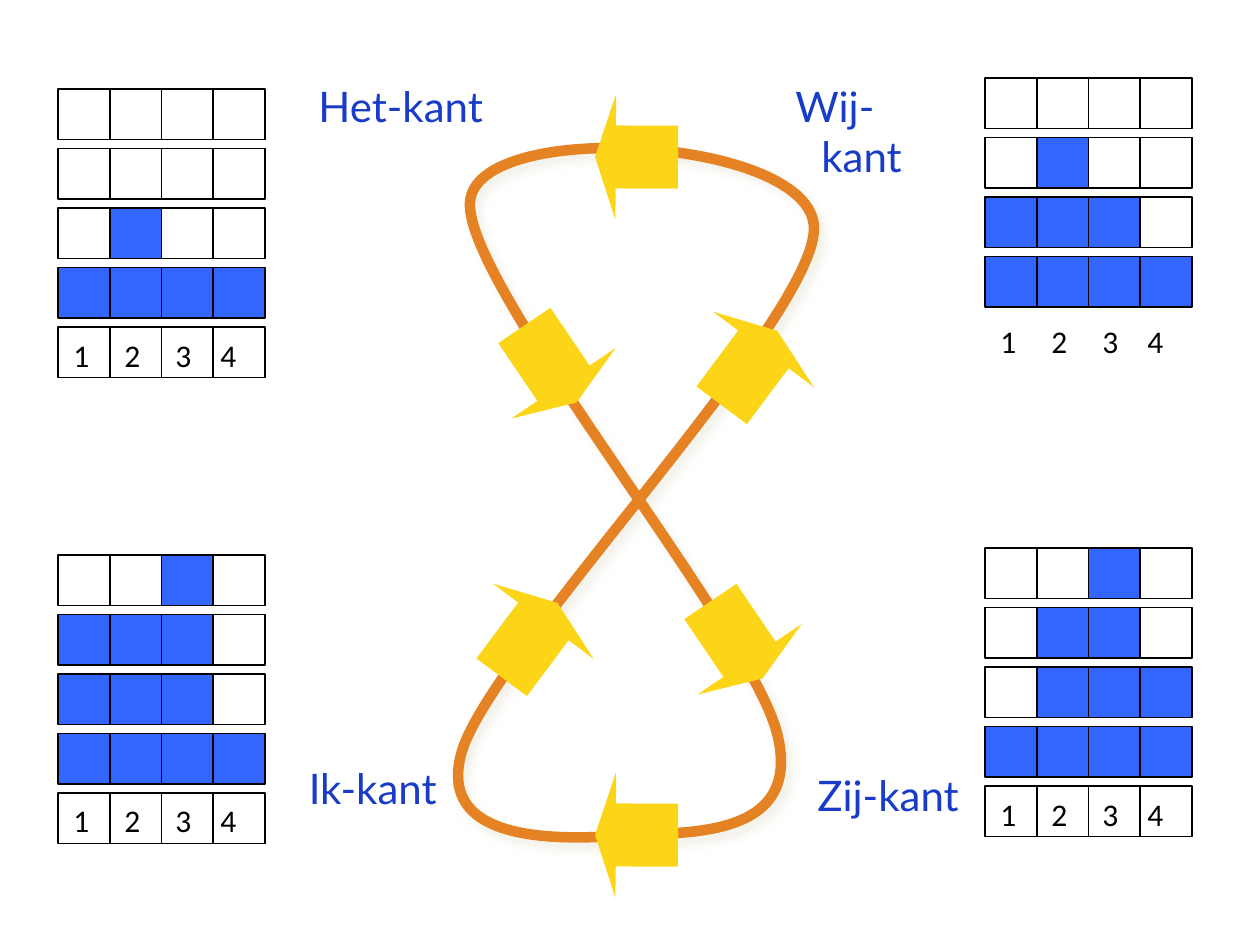
"""Build a slide with a figure-eight loop, direction arrows and four score grids."""
from lxml import etree
from pptx import Presentation, util as u
from pptx.dml.color import RGBColor
from pptx.enum import shapes, text
from pptx.oxml import ns

LABELS = [
    ("Het-kant", (306, 74, 261, 63), "LEFT"),
    ("Wij-kant", (783, 74, 174, 115), "LEFT"),
    ("Zij-kant", (805, 763, 174, 63), "LEFT"),
    ("Ik-kant", (238, 756, 211, 63), "RIGHT"),
]
GRIDS = [
    {"at": (58, 89), "rows": ["oo-o", "---o", "-#-o", "####", "oooo"], "digits": 330},
    {"at": (58, 555), "rows": ["oo#o", "###o", "###o", "####", "oooo"], "digits": 795},
    {"at": (985, 548), "rows": ["oo#o", "o##o", "o###", "####", "oooo"], "digits": 789},
    {"at": (985, 78), "rows": ["oooo", "o#oo", "###o", "####"], "digits": 316},
]
FILLS = {"#": "on", "o": "off", "-": None}
DIGITS = "1\t2\t3\t4"
DIGIT_TABS = (51, 102, 147)
ARROWS = [
    ((504, 301, 93, 126), 235.9, False),
    ((595, 94, 83, 126), 180.3, True),
    ((703, 305, 93, 126), 126.8, False),
    ((595, 772, 83, 126), 180.3, True),
    ((690, 577, 93, 126), 235.9, False),
    ((483, 577, 93, 126), 126.8, False),
]
LOOP_START = (777, 733)
LOOP_CURVES = [
    ((804, 838), (687, 832), (635, 835)),
    ((582, 838), (432, 852), (462, 751)),
    ((493, 650), (813, 321), (814, 229)),
    ((815, 137), (476, 117), (470, 202)),
    ((464, 285), (750, 627), LOOP_START),
]
CELL_W, CELL_H, ROW_PITCH = 51.8, 50.5, 59.5
THEME = {
    "loop": "E58324", "arrow": "FDD518", "label": "183CC7", "on": "3366FF",
    "off": "FFFFFF", "ink": "000000", "shadow": "EEECE1",
    "label_font": "Lato", "digit_font": "Calibri",
    "label_size": 24, "digit_size": 18, "loop_line": 6, "cell_line": 1,
}


def px(value):
    return u.Emu(round(value * 914400 / 126))


def color(name):
    return RGBColor.from_string(THEME[name])


def add_text(s, words, box, *, font, size, ink, align="LEFT", hang=0, tabs=()):
    tb = s.shapes.add_textbox(*map(px, box))
    tf = tb.text_frame
    tf.word_wrap = True
    p = tf.paragraphs[0]
    p.alignment = text.PP_ALIGN[align]
    pPr = p._p.get_or_add_pPr()
    if hang:
        pPr.set("marL", str(px(hang)))
        pPr.set("indent", str(-px(hang)))
    if tabs:
        tab_list = etree.SubElement(pPr, ns.qn("a:tabLst"))
        for tab in tabs:
            etree.SubElement(tab_list, ns.qn("a:tab"), pos=str(px(tab)), algn="l")
    r = p.add_run()
    r.text = words
    r.font.name = THEME[font]
    r.font.size = u.Pt(THEME[size])
    r.font.color.rgb = color(ink)


def set_fill(sp, name):
    if name:
        sp.fill.solid()
        sp.fill.fore_color.rgb = color(name)
    else:
        sp.fill.background()


def add_preset(s, kind, box, fill):
    sp = s.shapes.add_shape(kind, *map(px, box))
    sp.shadow.inherit = False
    set_fill(sp, fill)
    return sp


def set_line(sp, ink, width):
    sp.line.color.rgb = color(ink)
    sp.line.width = u.Pt(THEME[width])


def bend_lines(sp):
    lines = list(sp._element.iter(ns.qn("a:lnTo")))
    for i in range(0, len(lines), 3):
        curve = etree.Element(ns.qn("a:cubicBezTo"))
        lines[i].addprevious(curve)
        for line in lines[i:i + 3]:
            curve.append(line[0])
            line.getparent().remove(line)


def add_loop(s):
    builder = s.shapes.build_freeform(*map(px, LOOP_START))
    points = [tuple(map(px, point)) for curve in LOOP_CURVES for point in curve]
    builder.add_line_segments(points, close=True)
    sp = builder.convert_to_shape()
    bend_lines(sp)
    sp.shadow.inherit = False
    set_fill(sp, None)
    set_line(sp, "loop", "loop_line")
    effects = sp._element.spPr.find(ns.qn("a:effectLst"))
    shadow = etree.SubElement(
        effects, ns.qn("a:outerShdw"), blurRad=str(u.Pt(5)), dist=str(u.Pt(5)),
        dir=str(53 * 60000), rotWithShape="0")
    tint = etree.SubElement(shadow, ns.qn("a:srgbClr"), val=THEME["shadow"])
    etree.SubElement(tint, ns.qn("a:alpha"), val="75000")


def add_arrow(s, box, rotation, flipped):
    sp = add_preset(s, shapes.MSO_SHAPE.LEFT_ARROW, box, "arrow")
    sp.adjustments[0], sp.adjustments[1] = 0.5, 0.25
    sp.line.fill.background()
    sp.rotation = rotation
    if flipped:
        sp._element.spPr.xfrm.set("flipH", "1")


def add_grid(s, grid):
    left, top = grid["at"]
    for row, marks in enumerate(grid["rows"]):
        for col, mark in enumerate(marks):
            box = (left + col * CELL_W, top + row * ROW_PITCH, CELL_W, CELL_H)
            sp = add_preset(s, shapes.MSO_SHAPE.RECTANGLE, box, FILLS[mark])
            set_line(sp, "ink", "cell_line")
    add_text(s, DIGITS, (left + 3, grid["digits"], 221, 50), font="digit_font",
             size="digit_size", ink="ink", tabs=DIGIT_TABS)


def main():
    prs = Presentation()
    prs.slide_width, prs.slide_height = px(1260), px(945)
    s = prs.slides.add_slide(prs.slide_layouts[6])
    add_loop(s)
    for arrow in ARROWS:
        add_arrow(s, *arrow)
    for words, box, align in LABELS:
        add_text(s, words, box, font="label_font", size="label_size",
                 ink="label", align=align, hang=26)
    for grid in GRIDS:
        add_grid(s, grid)
    prs.save("out.pptx")


if __name__ == "__main__":
    main()
